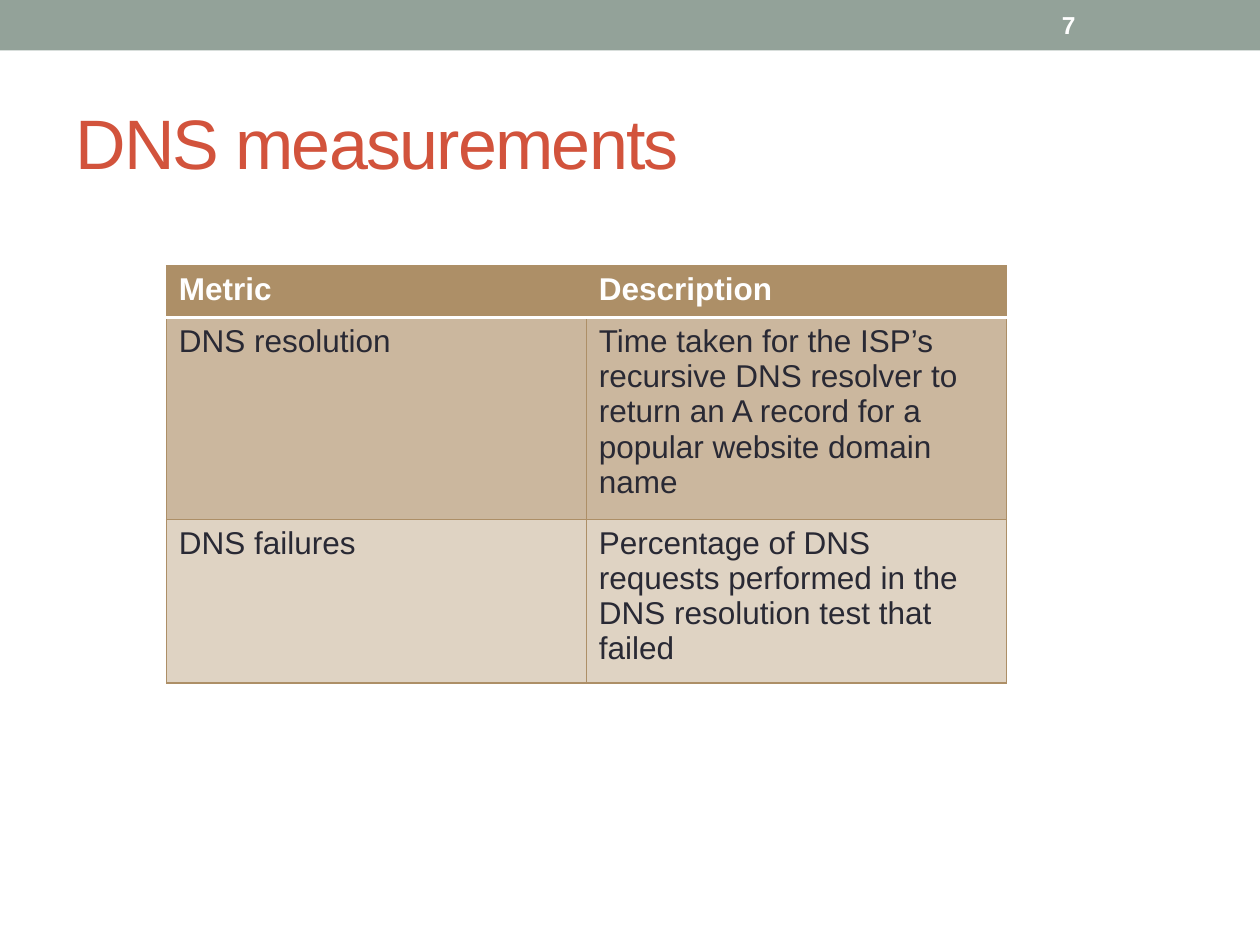
from lxml import etree
from pptx import Presentation
from pptx.dml.color import RGBColor
from pptx.enum.shapes import MSO_SHAPE
from pptx.enum.text import MSO_ANCHOR
from pptx.oxml.ns import qn
from pptx.util import Inches, Pt

RECT = MSO_SHAPE.RECTANGLE
MIDDLE = MSO_ANCHOR.MIDDLE

WHITE = RGBColor(0xFF, 0xFF, 0xFF)
SAGE = RGBColor(0x93, 0xA2, 0x99)
RED = RGBColor(0xD2, 0x53, 0x3C)
INK = RGBColor(0x29, 0x29, 0x34)
TAN = RGBColor(0xAD, 0x8F, 0x67)
TAN_MID = RGBColor(0xCB, 0xB7, 0x9E)
TAN_LIGHT = RGBColor(0xDF, 0xD3, 0xC3)

METRICS = [
    ("Metric", "Description"),
    ("DNS resolution",
     "Time taken for the ISP’s recursive DNS resolver to return an A record "
     "for a popular website domain\nname"),
    ("DNS failures",
     "Percentage of DNS requests performed in the DNS resolution test that failed"),
]
ROW_HEIGHTS = [0.41, 1.5, 1.21]
ROW_FILLS = [TAN, TAN_MID, TAN_LIGHT]


class Deck:
    """Holds the style and the current slide; lengths are shares of the slide's size."""
    font = "Arial"

    def __init__(self, width, height):
        self.prs = Presentation()
        self.prs.slide_width = Inches(width)
        self.prs.slide_height = Inches(height)
        self.slide = self.prs.slides.add_slide(self.prs.slide_layouts[6])

    def box(self, x, y, w, h):
        sw, sh = self.prs.slide_width, self.prs.slide_height
        return int(x * sw), int(y * sh), int(w * sw), int(h * sh)

    def style(self, tf, size, color, bold=False, spacing=0):
        """Format every run; spacing is the letter spacing in points."""
        for p in tf.paragraphs:
            for r in p.runs:
                r.font.name, r.font.size, r.font.bold = self.font, Pt(size), bold
                r.font.color.rgb = color
                if spacing:
                    r.font._element.set("spc", str(int(spacing * 100)))

    def bar(self, share, color):
        s = self.slide.shapes.add_shape(RECT, *self.box(0, 0, 1, share))
        s.shadow.inherit = False
        s.fill.solid()
        s.fill.fore_color.rgb = color
        s.line.fill.background()

    def text(self, area, text, size, color, **style):
        tf = self.slide.shapes.add_textbox(*self.box(*area)).text_frame
        tf.word_wrap = True
        tf.vertical_anchor = MIDDLE
        tf.text = text
        self.style(tf, size, color, **style)

    def border(self, cell, side, color, width):
        ln = etree.SubElement(cell._tc.get_or_add_tcPr(), qn(f"a:ln{side}"), w=str(Pt(width)))
        fill = etree.SubElement(ln, qn("a:solidFill"))
        etree.SubElement(fill, qn("a:srgbClr"), val=str(color))

    def table(self, area, rows, heights, fills):
        """Fill a table whose first row is a header with a white rule below."""
        table = self.slide.shapes.add_table(
            len(rows), len(rows[0]), *self.box(*area)).table
        for i, (values, height, fill) in enumerate(zip(rows, heights, fills)):
            table.rows[i].height = Inches(height)
            for j, value in enumerate(values):
                cell = table.cell(i, j)
                cell.text_frame.text = value
                self.style(cell.text_frame, 18, INK if i else WHITE, bold=i == 0)
                for side in "LRTB":
                    header_rule = (i, side) in ((0, "B"), (1, "T"))
                    self.border(cell, side, *((WHITE, 2.08) if header_rule else (TAN, 0.75)))
                cell.fill.solid()
                cell.fill.fore_color.rgb = fill


def main():
    deck = Deck(10, 7.5)
    deck.bar(0.4 / 7.5, SAGE)
    deck.text((0.05, 0.58 / 7.5, 0.9, 1.08 / 7.5), "DNS measurements", 40, RED, spacing=-1)
    deck.text((0.833, 0.02 / 7.5, 0.117, 0.36 / 7.5), "7", 14, WHITE, bold=True)
    deck.table((0.132, 2.11 / 7.5, 2 / 3, sum(ROW_HEIGHTS) / 7.5),
               METRICS, ROW_HEIGHTS, ROW_FILLS)
    deck.prs.save("out.pptx")


if __name__ == "__main__":
    main()
